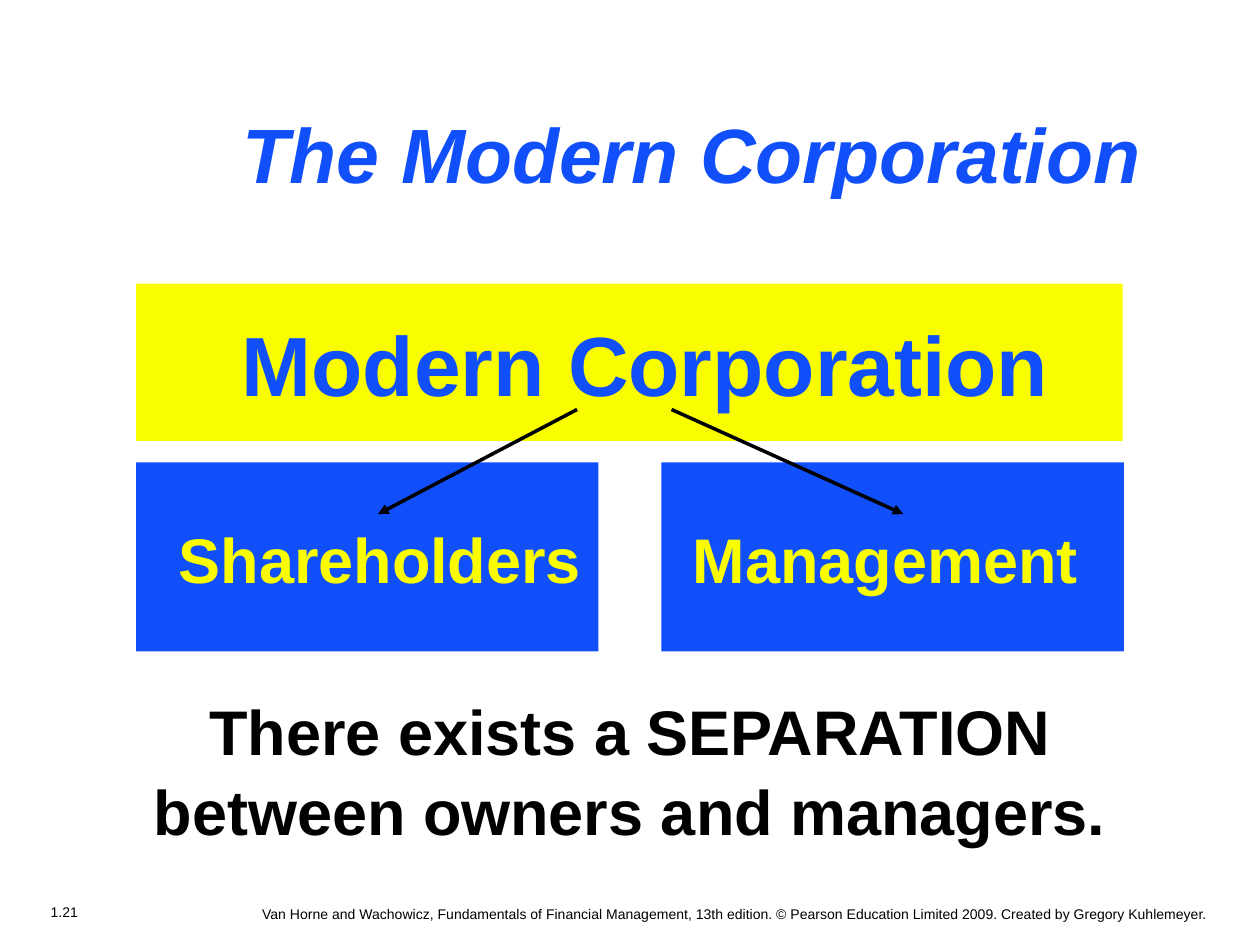
from dataclasses import dataclass

from lxml.etree import SubElement
from pptx import Presentation
from pptx.dml.color import RGBColor
from pptx.enum.shapes import MSO_CONNECTOR, MSO_SHAPE
from pptx.enum.text import MSO_ANCHOR, PP_ALIGN
from pptx.oxml.ns import qn
from pptx.util import Inches, Pt

COLORS = {"blue": "114FFB", "yellow": "FAFD00", "black": "000000"}
FONT = "Arial"


@dataclass
class Frame:
    left: float
    top: float
    width: float
    height: float

    def lengths(self) -> list:
        return [Inches(v) for v in (self.left, self.top, self.width, self.height)]


@dataclass
class Panel:
    label: str
    frame: Frame
    label_frame: Frame
    fill: str
    text_color: str
    size: int


@dataclass
class Arrow:
    start: tuple[float, float]
    end: tuple[float, float]


PANELS = [
    Panel("Modern Corporation", Frame(1.08, 2.25, 7.83, 1.25),
          Frame(1.82, 2.43, 6.68, 0.91), "yellow", "blue", 48),
    Panel("Shareholders", Frame(1.08, 3.67, 3.67, 1.5),
          Frame(1.32, 4.08, 3.43, 0.7), "blue", "yellow", 36),
    Panel("Management", Frame(5.25, 3.67, 3.67, 1.5),
          Frame(5.4, 4.08, 3.28, 0.7), "blue", "yellow", 36),
]
ARROWS = [Arrow((4.58, 3.25), (3, 4.08)), Arrow((5.33, 3.25), (7.17, 4.08))]


def rgb(name: str) -> RGBColor:
    return RGBColor.from_string(COLORS[name])


def add_text(slide, text: str, frame: Frame, *, size: int, color: str = "black",
             bold: bool = False, italic: bool = False, wrap: bool = True,
             align=PP_ALIGN.LEFT, anchor=MSO_ANCHOR.TOP,
             line_spacing: float = 1.0) -> None:
    text_frame = slide.shapes.add_textbox(*frame.lengths()).text_frame
    text_frame.word_wrap = wrap
    text_frame.vertical_anchor = anchor
    paragraph = text_frame.paragraphs[0]
    paragraph.alignment = align
    paragraph.line_spacing = line_spacing
    run = paragraph.add_run()
    run.text = text
    font = run.font
    font.name, font.size = FONT, Pt(size)
    font.bold, font.italic = bold, italic
    font.color.rgb = rgb(color)


def add_panel(slide, panel: Panel) -> None:
    shape = slide.shapes.add_shape(MSO_SHAPE.RECTANGLE, *panel.frame.lengths())
    shape.shadow.inherit = False
    shape.fill.solid()
    shape.fill.fore_color.rgb = rgb(panel.fill)
    shape.line.fill.background()
    add_text(slide, panel.label, panel.label_frame, size=panel.size,
             color=panel.text_color, bold=True, wrap=False)


def add_arrow(slide, arrow: Arrow) -> None:
    points = [Inches(v) for v in (*arrow.start, *arrow.end)]
    connector = slide.shapes.add_connector(MSO_CONNECTOR.STRAIGHT, *points)
    connector.line.color.rgb = rgb("black")
    connector.line.width = Pt(2)
    SubElement(connector.line._get_or_add_ln(), qn("a:tailEnd"), type="triangle")
    SubElement(connector._element.spPr, qn("a:effectLst"))


def main() -> None:
    presentation = Presentation()
    presentation.slide_width = Inches(10)
    presentation.slide_height = Inches(7.5)
    slide = presentation.slides.add_slide(presentation.slide_layouts[6])

    add_text(slide, "1.21", Frame(0.07, 7.12, 0.88, 0.24), size=8,
             wrap=False, align=PP_ALIGN.CENTER)
    add_text(slide, "Van Horne and Wachowicz, Fundamentals of Financial Management, "
             "13th edition. © Pearson Education Limited 2009. "
             "Created by Gregory Kuhlemeyer.",
             Frame(0.24, 7.14, 9.45, 0.21), size=8, align=PP_ALIGN.RIGHT)
    add_text(slide, "The Modern Corporation", Frame(1.83, 0.8, 7.42, 0.83), size=44,
             color="blue", bold=True, italic=True, anchor=MSO_ANCHOR.MIDDLE)
    add_text(slide, "There exists a SEPARATION between owners and managers.",
             Frame(0.75, 5.42, 8.5, 1.3), size=36, bold=True,
             align=PP_ALIGN.CENTER, line_spacing=1.05)
    for panel in PANELS:
        add_panel(slide, panel)
    for arrow in ARROWS:
        add_arrow(slide, arrow)
    presentation.save("out.pptx")


if __name__ == "__main__":
    main()
